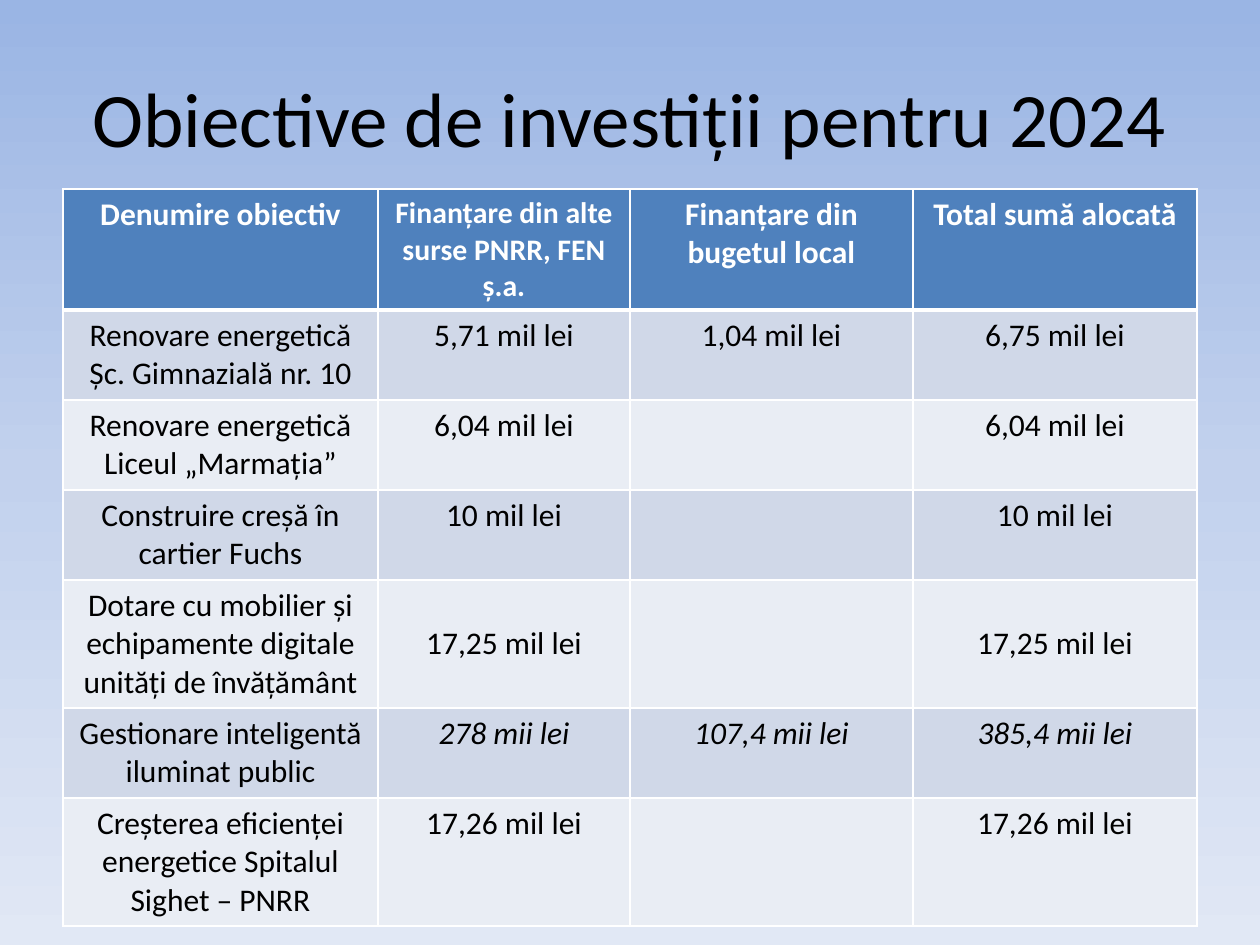
from copy import deepcopy

from lxml import etree
from pptx import Presentation
from pptx import util as u
from pptx.dml.color import RGBColor
from pptx.enum import text
from pptx.oxml.ns import qn

PX = 914400 / 126
FONT = "Calibri"
BLACK = RGBColor(0x00, 0x00, 0x00)
WHITE = RGBColor(0xFF, 0xFF, 0xFF)
HEADER = RGBColor(0x4F, 0x81, 0xBD)
BANDS = [RGBColor(0xD0, 0xD8, 0xE8), RGBColor(0xE9, 0xED, 0xF4)]
SKY = [(0, RGBColor(0x9A, 0xB5, 0xE4)),
       (0.5, RGBColor(0xC2, 0xD1, 0xED)),
       (1, RGBColor(0xE1, 0xE8, 0xF5))]

COLS = [315, 252, 283, 284]
ROWS = [121, 90, 90, 90, 128, 90, 128]
HEADS = ["Denumire obiectiv", "Finanțare din alte surse PNRR, FEN ș.a.",
         "Finanțare din bugetul local", "Total sumă alocată"]
DATA = [
    ["Renovare energetică Șc. Gimnazială nr. 10",
     "5,71 mil lei", "1,04 mil lei", "6,75 mil lei"],
    ["Renovare energetică Liceul „Marmația”",
     "6,04 mil lei", "", "6,04 mil lei"],
    ["Construire creșă în cartier Fuchs", "10 mil lei", "", "10 mil lei"],
    ["Dotare cu mobilier și echipamente digitale unități de învățământ",
     "17,25 mil lei", "", "17,25 mil lei"],
    ["Gestionare inteligentă iluminat public",
     "278 mii lei", "107,4 mii lei", "385,4 mii lei"],
    ["Creșterea eficienței energetice Spitalul Sighet – PNRR",
     "17,26 mil lei", "", "17,26 mil lei"],
]
CENTRED_ROW, ITALIC_ROW = 4, 5


def px(n):
    return u.Emu(round(n * PX))


def write(tf, words, size=18, color=BLACK, bold=False, italic=False):
    p = tf.paragraphs[0]
    p.alignment = text.PP_ALIGN.CENTER
    if not words:
        p.font.size = u.Pt(size)
        return
    r = p.add_run()
    r.text = words
    f = r.font
    f.name, f.size, f.bold, f.italic = FONT, u.Pt(size), bold, italic
    f.color.rgb = color


def add_borders(cell, bottom):
    """Give the cell white rules; only the bottom one varies in width."""
    pr = cell._tc.get_or_add_tcPr()
    widths = {"a:lnL": 1, "a:lnR": 1, "a:lnT": 1, "a:lnB": bottom}
    for i, (tag, width) in enumerate(widths.items()):
        ln = etree.Element(qn(tag), w=str(u.Pt(width)))
        fill = etree.SubElement(ln, qn("a:solidFill"))
        etree.SubElement(fill, qn("a:srgbClr"), val=str(WHITE))
        pr.insert(i, ln)


def paint_background(s):
    fill = s.background.fill
    fill.gradient()
    fill.gradient_angle = 270
    stops = s._element.find(".//" + qn("a:gsLst"))
    stops.append(deepcopy(stops[-1]))
    for stop, (pos, color) in zip(fill.gradient_stops, SKY):
        stop.position = pos
        stop.color.rgb = color


def add_title(s, x, y, w, h):
    tf = s.shapes.add_textbox(px(x), px(y), px(w), px(h)).text_frame
    tf.word_wrap = True
    tf.vertical_anchor = text.MSO_ANCHOR.MIDDLE
    write(tf, "Obiective de investiții pentru 2024", size=44)


def add_investments(s, x, y):
    table = s.shapes.add_table(len(ROWS), len(COLS), px(x), px(y),
                               px(sum(COLS)), px(sum(ROWS))).table
    for col, w in zip(table.columns, COLS):
        col.width = px(w)
    for row, h in zip(table.rows, ROWS):
        row.height = px(h)

    for i, line in enumerate([HEADS] + DATA):
        head = i == 0
        for j, words in enumerate(line):
            cell = table.cell(i, j)
            cell.fill.solid()
            cell.fill.fore_color.rgb = HEADER if head else BANDS[(i - 1) % 2]
            add_borders(cell, bottom=3 if head else 1)
            if i == CENTRED_ROW:
                cell.vertical_anchor = text.MSO_ANCHOR.MIDDLE
            write(cell.text_frame, words,
                  size=17 if head and j == 1 else 18,
                  color=WHITE if head else BLACK, bold=head,
                  italic=i == ITALIC_ROW and j > 0)


def main():
    prs = Presentation()
    prs.slide_width, prs.slide_height = px(1260), px(945)
    s = prs.slides.add_slide(prs.slide_layouts[6])
    paint_background(s)
    add_title(s, 63, 38, 1134, 157)
    add_investments(s, 63, 189)
    prs.save("out.pptx")


if __name__ == "__main__":
    main()
